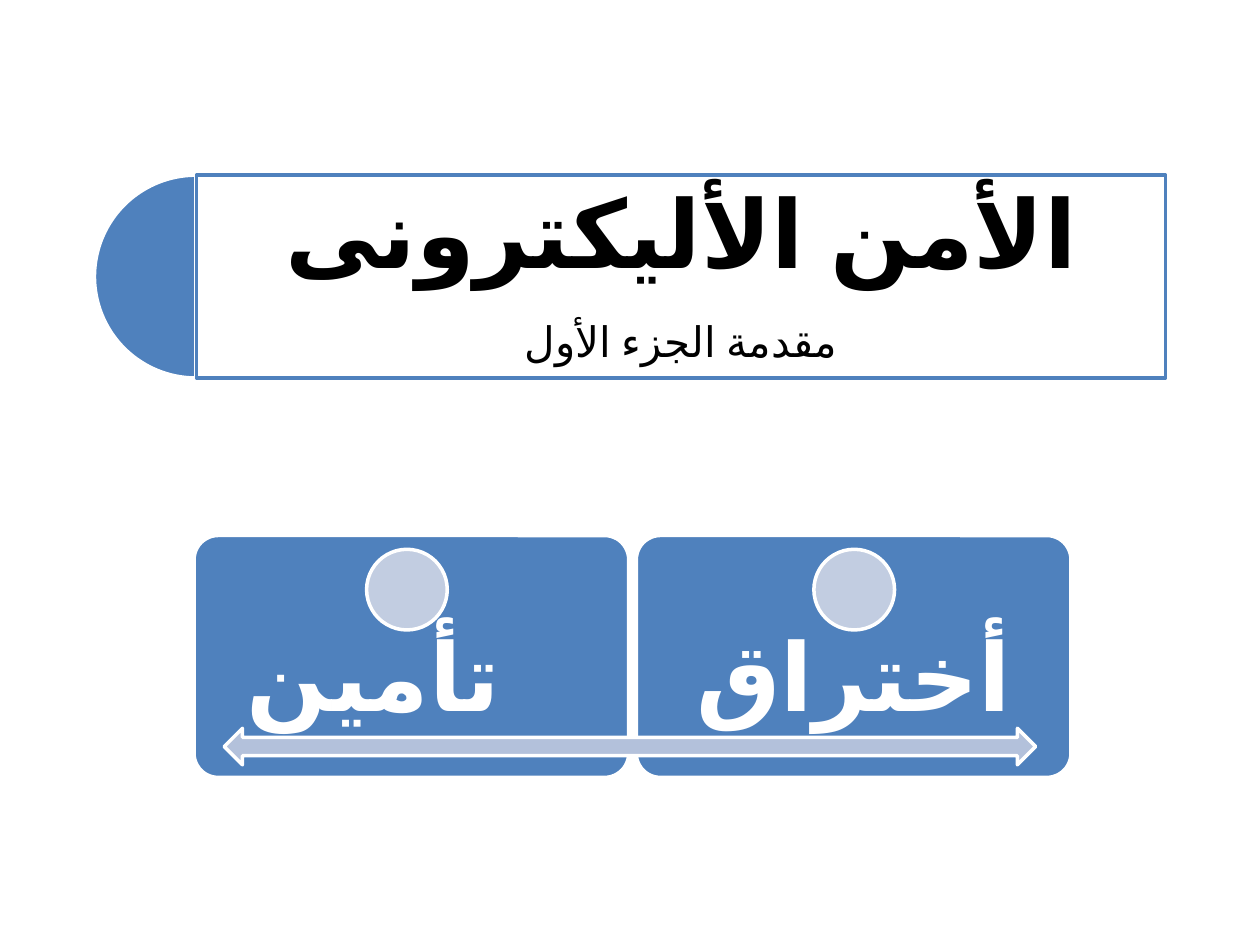
from dataclasses import dataclass

from lxml import etree
from pptx import Presentation
from pptx.dml.color import RGBColor
from pptx.enum.lang import MSO_LANGUAGE_ID
from pptx.enum.shapes import MSO_SHAPE
from pptx.enum.text import MSO_ANCHOR, PP_ALIGN
from pptx.oxml.ns import qn
from pptx.util import Inches, Pt

PIE, RECT, OVAL = MSO_SHAPE.PIE, MSO_SHAPE.RECTANGLE, MSO_SHAPE.OVAL
ROUND, ARROW = MSO_SHAPE.ROUNDED_RECTANGLE, MSO_SHAPE.LEFT_RIGHT_ARROW
MIDDLE = MSO_ANCHOR.MIDDLE
LEFT, CENTER = PP_ALIGN.LEFT, PP_ALIGN.CENTER
ARABIC = MSO_LANGUAGE_ID.ARABIC_EGYPT

BLUE = RGBColor(0x4F, 0x81, 0xBD)
PALE = RGBColor(0xC2, 0xCD, 0xE1)
MIST = RGBColor(0xB3, 0xC1, 0xDB)
WHITE = RGBColor(0xFF, 0xFF, 0xFF)
BLACK = RGBColor(0, 0, 0)
FONT = "Calibri"


@dataclass
class Box:
    left: float
    top: float
    width: float
    height: float

    def lengths(self) -> list:
        return [Inches(n) for n in (self.left, self.top, self.width, self.height)]


@dataclass
class Line:
    text: str
    size: int
    bold: bool
    color: RGBColor
    align: PP_ALIGN = CENTER


@dataclass
class Card:
    left: float
    dot: float
    label: Line


CARDS = [
    Card(1.54, 2.91, Line("تأمين", 54, True, WHITE, LEFT)),
    Card(5.05, 6.46, Line("أختراق", 54, True, WHITE)),
]
TITLE = [
    Line("الأمن الأليكترونى", 54, True, BLACK),
    Line("مقدمة الجزء الأول", 24, False, BLACK),
]


def add_form(slide, kind: MSO_SHAPE, box: Box, fill: RGBColor,
             edge: RGBColor = WHITE, adjust: tuple = ()):
    form = slide.shapes.add_shape(kind, *box.lengths())
    form.shadow.inherit = False
    form.fill.solid()
    form.fill.fore_color.rgb = fill
    form.line.color.rgb = edge
    form.line.width = Pt(2)
    for i, value in enumerate(adjust):
        form.adjustments[i] = value
    return form


def add_text(slide, box: Box, inset: float, lines: list[Line]) -> None:
    frame = slide.shapes.add_textbox(*box.lengths()).text_frame
    frame.word_wrap = True
    frame.vertical_anchor = MIDDLE
    frame.margin_left = frame.margin_right = Inches(inset)
    frame.margin_top = frame.margin_bottom = Inches(inset)
    frame.text = "\n".join(line.text for line in lines)
    for para, line in zip(frame.paragraphs, lines):
        para.alignment = line.align
        para.line_spacing = 0.9
        para.space_after = Pt(line.size * 0.35)
        font = para.runs[0].font
        font.name, font.size, font.bold = FONT, Pt(line.size), line.bold
        font.color.rgb = line.color
        font.language_id = ARABIC


def add_card(slide, card: Card) -> None:
    add_form(slide, ROUND, Box(card.left, 4.25, 3.45, 1.92), BLUE, adjust=(0.1,))
    add_text(slide, Box(card.left, 5.02, 3.45, 0.77), 0.42, [card.label])
    add_form(slide, OVAL, Box(card.dot, 4.36, 0.64, 0.64), PALE)


def main() -> None:
    deck = Presentation()
    deck.slide_width, deck.slide_height = Inches(10), Inches(7.5)
    slide = deck.slides.add_slide(deck.slide_layouts[6])

    # Title panel with half disc; pie angles are in units of 100000/60000 degree
    add_form(slide, PIE, Box(0.75, 1.39, 1.61, 1.61), BLUE, adjust=(54, 162))
    panel = Box(1.56, 1.39, 7.69, 1.61)
    form = add_form(slide, RECT, panel, WHITE, BLUE)
    tint = form.fill._xPr.find(qn("a:solidFill"))[0]
    etree.SubElement(tint, qn("a:alpha"), val="90000")
    add_text(slide, panel, 0.23, TITLE)

    # Two cards joined by a double arrow
    for card in CARDS:
        add_card(slide, card)
    add_form(slide, ARROW, Box(1.78, 5.78, 6.44, 0.29), MIST)

    deck.save("out.pptx")


if __name__ == "__main__":
    main()
